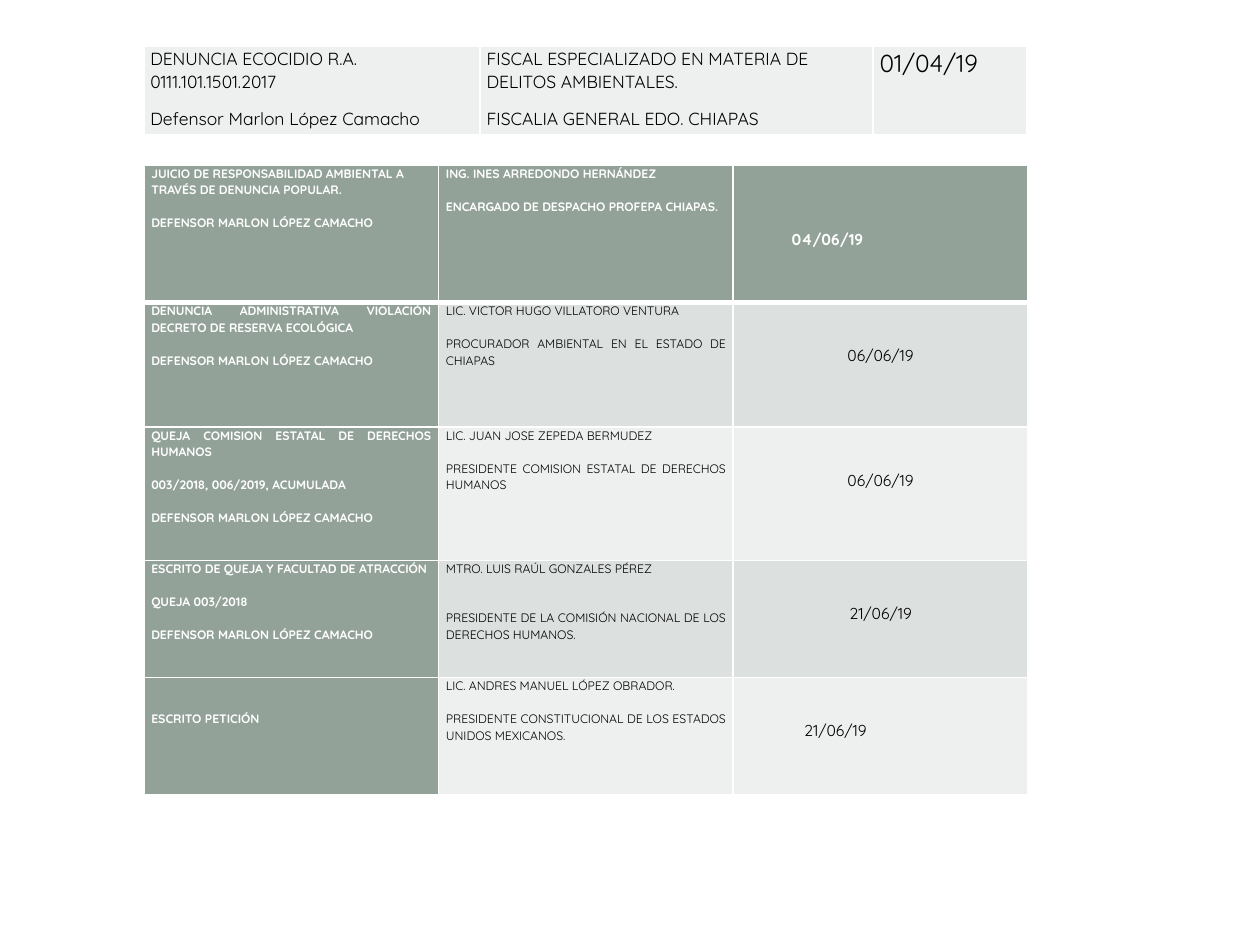
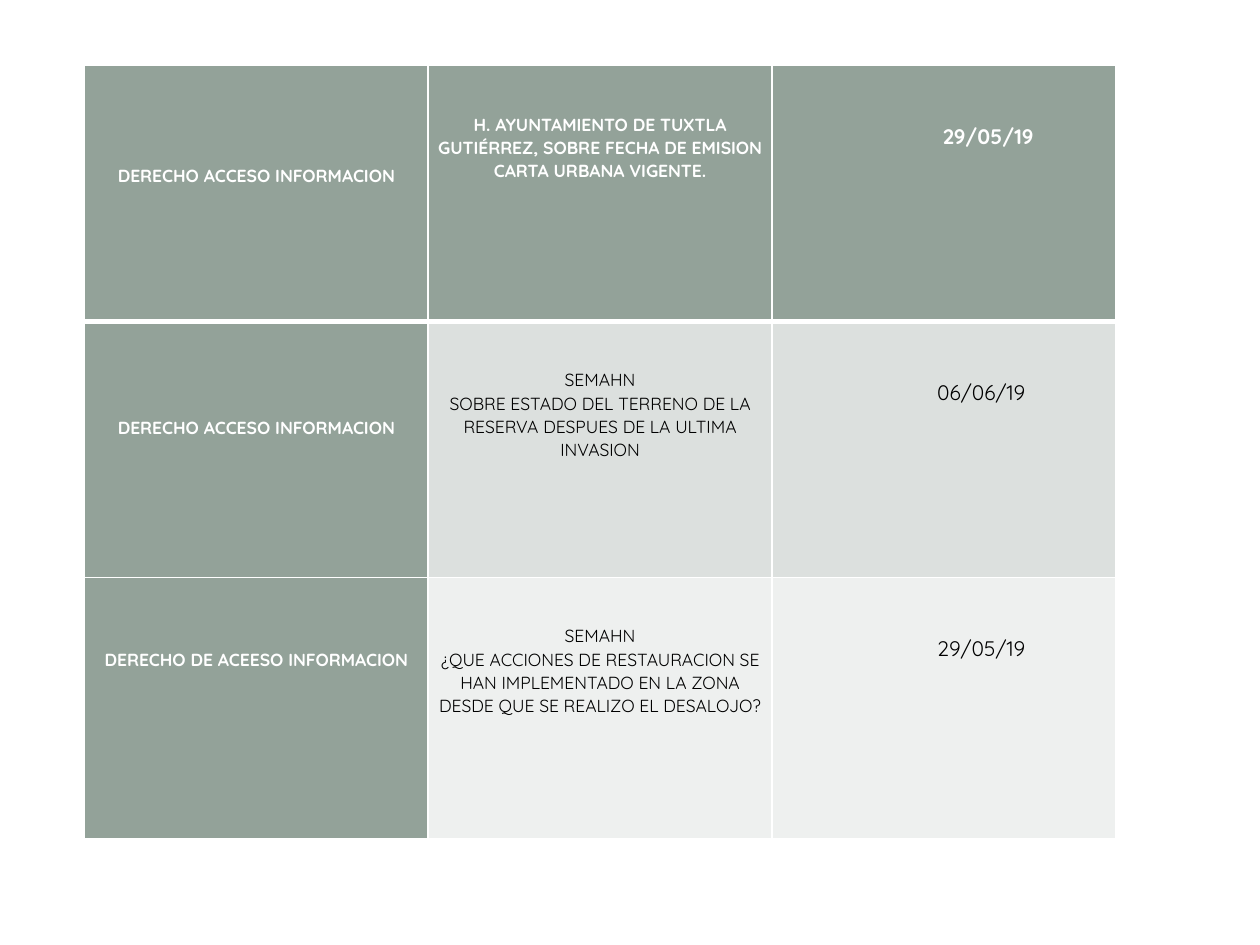
from dataclasses import dataclass

from lxml import etree
from pptx import Presentation
from pptx.dml.color import RGBColor
from pptx.enum.text import PP_ALIGN
from pptx.oxml.ns import qn
from pptx.util import Cm, Pt

LEFT, CENTER, JUSTIFY = PP_ALIGN.LEFT, PP_ALIGN.CENTER, PP_ALIGN.JUSTIFY

WHITE = RGBColor(0xFF, 0xFF, 0xFF)
BLACK = RGBColor(0x00, 0x00, 0x00)
SAGE = RGBColor(0x93, 0xA2, 0x99)
BAND_DARK = RGBColor(0xDC, 0xE0, 0xDE)
BAND_LIGHT = RGBColor(0xEE, 0xF0, 0xEF)

FONT = "Quicksand"
LINE_SPACING = 1.07
THIN, THICK = 1, 3
DEFENDER = "DEFENSOR MARLON LÓPEZ CAMACHO"


@dataclass
class Entry:
    """Text of one cell; top and left are extra insets in cm, gap is in points."""
    paragraphs: tuple
    size: float
    align: PP_ALIGN = JUSTIFY
    top: float = 0
    left: float = 0
    gap: float = 0


def filing(*paragraphs, align=JUSTIFY, top=0, gap=9.35):
    return Entry(paragraphs, 7, align, top, gap=gap)


def filing_date(date, align=CENTER, top=0.85, left=0):
    return Entry((date,), 9, align, top, left)


def request(*paragraphs, top=0.94):
    return Entry(paragraphs, 10, CENTER, top)


def request_date(date, left=1.51):
    return Entry((date,), 12, CENTER, 1.13, left)


COMPLAINT = [[
    Entry(("DENUNCIA ECOCIDIO R.A. 0111.101.1501.2017",
           "Defensor Marlon López Camacho"), 10, LEFT, gap=8),
    Entry(("FISCAL ESPECIALIZADO EN MATERIA DE DELITOS AMBIENTALES.",
           "FISCALIA GENERAL EDO. CHIAPAS"), 10, LEFT, gap=8),
    Entry(("01/04/19",), 14, LEFT),
]]

FILINGS = [
    [filing("JUICIO DE RESPONSABILIDAD AMBIENTAL A TRAVÉS DE DENUNCIA POPULAR.",
            DEFENDER, align=LEFT),
     filing("ING. INES ARREDONDO HERNÁNDEZ",
            "ENCARGADO DE DESPACHO PROFEPA CHIAPAS."),
     filing_date("04/06/19", LEFT, 1.27, 1.03)],
    [filing("DENUNCIA ADMINISTRATIVA VIOLACIÓN DECRETO DE RESERVA ECOLÓGICA", DEFENDER),
     filing("LIC. VICTOR HUGO VILLATORO VENTURA",
            "PROCURADOR AMBIENTAL EN EL ESTADO DE CHIAPAS"),
     filing_date("06/06/19")],
    [filing("QUEJA COMISION ESTATAL DE DERECHOS HUMANOS",
            "003/2018, 006/2019, ACUMULADA", DEFENDER),
     filing("LIC. JUAN JOSE ZEPEDA BERMUDEZ",
            "PRESIDENTE COMISION ESTATAL DE DERECHOS HUMANOS"),
     filing_date("06/06/19")],
    [filing("ESCRITO DE QUEJA Y FACULTAD DE ATRACCIÓN", "QUEJA 003/2018", DEFENDER),
     filing("MTRO. LUIS RAÚL GONZALES PÉREZ",
            "PRESIDENTE DE LA COMISIÓN NACIONAL DE LOS DERECHOS HUMANOS.", gap=18.7),
     filing_date("21/06/19")],
    [filing("ESCRITO PETICIÓN", top=0.66),
     filing("LIC. ANDRES MANUEL LÓPEZ OBRADOR.",
            "PRESIDENTE CONSTITUCIONAL DE LOS ESTADOS UNIDOS MEXICANOS."),
     filing_date("21/06/19", LEFT, left=1.28)],
]

REQUESTS = [
    [request("DERECHO ACCESO INFORMACION", top=1.98),
     request("H. AYUNTAMIENTO DE TUXTLA GUTIÉRREZ, SOBRE FECHA DE EMISION "
             "CARTA URBANA VIGENTE."),
     request_date("29/05/19", left=1.79)],
    [request("DERECHO ACCESO INFORMACION", top=1.89),
     request("SEMAHN", "SOBRE ESTADO DEL TERRENO DE LA RESERVA DESPUES DE LA "
             "ULTIMA INVASION"),
     request_date("06/06/19")],
    [request("DERECHO DE ACEESO INFORMACION", top=1.41),
     request("SEMAHN", "¿QUE ACCIONES DE RESTAURACION SE HAN IMPLEMENTADO EN LA "
             "ZONA DESDE QUE SE REALIZO EL DESALOJO?"),
     request_date("29/05/19")],
]


def set_borders(cell, top, bottom):
    """Draw white cell edges; must run before the cell fill is set."""
    properties = cell._tc.get_or_add_tcPr()
    for edge, width in (("L", THIN), ("R", THIN), ("T", top), ("B", bottom)):
        line = etree.SubElement(properties, qn(f"a:ln{edge}"), w=str(Pt(width)))
        fill = etree.SubElement(line, qn("a:solidFill"))
        etree.SubElement(fill, qn("a:srgbClr"), val=str(WHITE))


def write_entry(cell, entry, inset, emphasized):
    cell.margin_left, cell.margin_right = Cm(inset + entry.left), Cm(inset)
    cell.margin_top, cell.margin_bottom = Cm(entry.top), 0
    frame = cell.text_frame
    for index, text in enumerate(entry.paragraphs):
        paragraph = frame.add_paragraph() if index else frame.paragraphs[0]
        paragraph.text = text
        paragraph.alignment = entry.align
        paragraph.line_spacing = LINE_SPACING
        paragraph.space_before = Pt(entry.gap if index else 0)
        paragraph.space_after = Pt(0)
        paragraph.font.name = FONT
        paragraph.font.size = Pt(entry.size)
        paragraph.font.bold = emphasized
        paragraph.font.color.rgb = WHITE if emphasized else BLACK


def add_register(slide, left, top, widths, heights, entries, inset, headed=True):
    """Place a table of entries; a headed one has a sage first row and column."""
    table = slide.shapes.add_table(
        len(heights), len(widths), Cm(left), Cm(top),
        Cm(sum(widths)), Cm(sum(heights))).table
    for column, width in zip(table.columns, widths):
        column.width = Cm(width)
    for row, height in zip(table.rows, heights):
        row.height = Cm(height)
    for r, row_entries in enumerate(entries):
        for c, entry in enumerate(row_entries):
            cell = table.cell(r, c)
            emphasized = headed and (r == 0 or c == 0)
            set_borders(cell, THICK if headed and r == 1 else THIN,
                        THICK if headed and r == 0 else THIN)
            cell.fill.solid()
            band = BAND_DARK if r % 2 else BAND_LIGHT
            cell.fill.fore_color.rgb = SAGE if emphasized else band
            write_entry(cell, entry, inset, emphasized)


def build_filings_slide(slide):
    add_register(slide, 2.9, 0.93, [6.78, 7.92, 3.1], [1.78], COMPLAINT, 0.13,
                 headed=False)
    add_register(slide, 2.9, 3.33, [5.94] * 3, [2.77, 2.51, 2.69, 2.36, 2.36],
                 FILINGS, 0.15)


def build_requests_slide(slide):
    add_register(slide, 1.7, 1.32, [6.93] * 3, [5.16, 5.16, 5.26], REQUESTS, 0.18)


def main():
    deck = Presentation()
    deck.slide_width, deck.slide_height = Cm(25.4), Cm(19.05)
    blank = deck.slide_layouts[6]
    for build in (build_filings_slide, build_requests_slide):
        build(deck.slides.add_slide(blank))
    deck.save("out.pptx")


if __name__ == "__main__":
    main()
